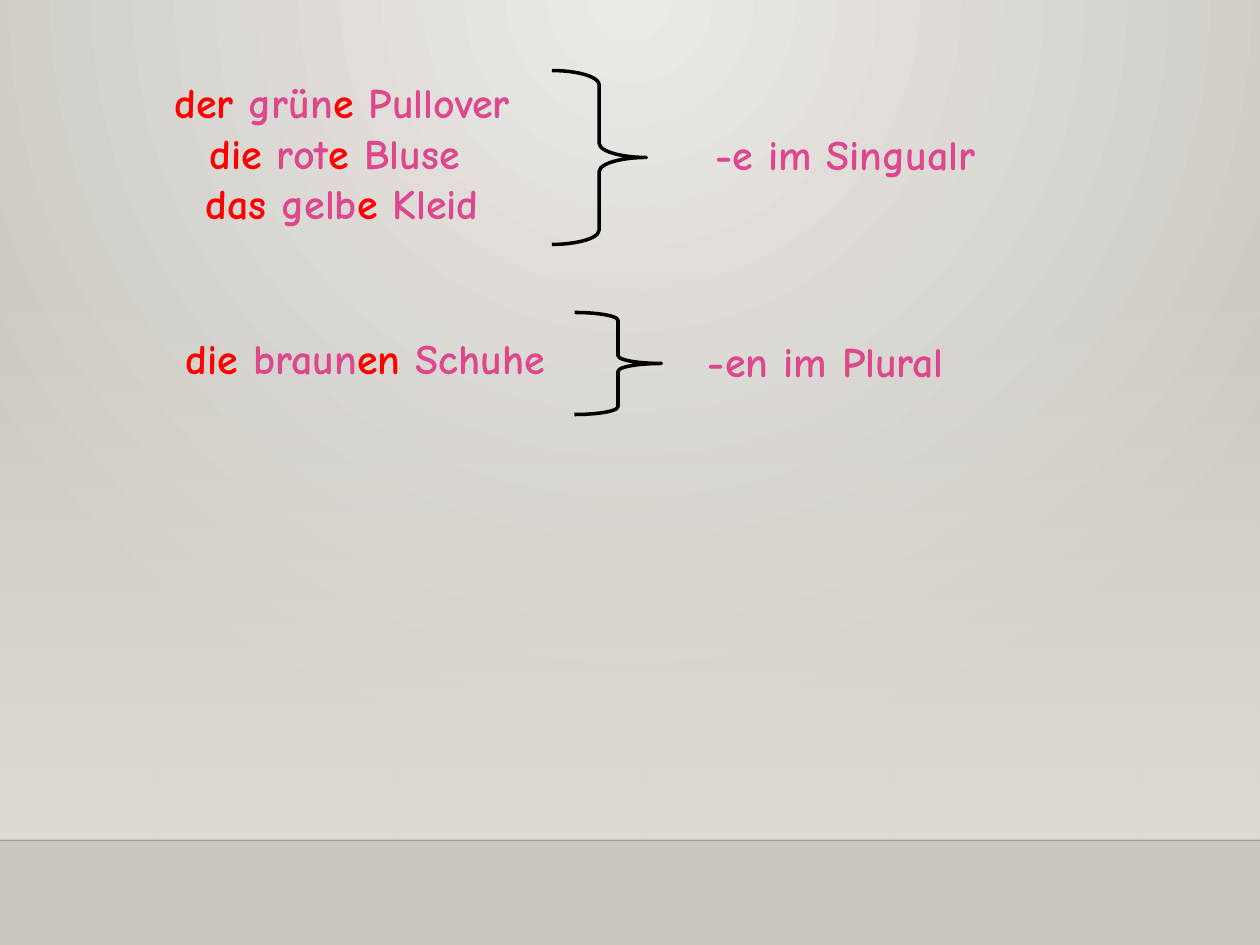
from dataclasses import dataclass

from lxml.etree import SubElement
from pptx import Presentation
from pptx.dml.color import RGBColor
from pptx.enum.shapes import MSO_CONNECTOR, MSO_SHAPE
from pptx.enum.text import MSO_AUTO_SIZE, PP_ALIGN
from pptx.oxml.ns import qn
from pptx.util import Inches, Pt


@dataclass(frozen=True)
class Theme:
    font: str = "Comic Neue"
    size: int = 24
    red: str = "FF0000"
    pink: str = "DE478E"
    ink: str = "000000"
    edge: str = "000001"
    light: str = "ECEAE7"
    dark: str = "CAC7C1"
    glow: str = "DFDBD5"


THEME = Theme()


def rgb(code):
    return RGBColor.from_string(code)


def set_alpha(root, value):
    """Give the first colour under root an opacity in percent."""
    color = next(root.iter(qn("a:srgbClr")))
    SubElement(color, qn("a:alpha"), val=str(value * 1000))


def set_stops(fill, *codes):
    fill.gradient()
    for stop, code, place in zip(fill.gradient_stops, codes, (0, 1)):
        stop.color.rgb = rgb(code)
        stop.position = place


def paint_back(slide):
    # Round glow that starts at the top centre
    set_stops(slide.background.fill, THEME.light, THEME.dark)
    grad = next(slide.element.iter(qn("a:gradFill")))
    grad.remove(grad.find(qn("a:lin")))
    ring = SubElement(grad, qn("a:path"), {"path": "circle"})
    SubElement(ring, qn("a:fillToRect"),
               l="43000", t="0", r="43000", b="100000")

    # Band that fades in down to the floor line
    band = slide.shapes.add_shape(
        MSO_SHAPE.RECTANGLE, 0, Inches(2.2), Inches(10), Inches(4.46))
    band.shadow.inherit = False
    band.line.fill.background()
    set_stops(band.fill, THEME.glow, THEME.glow)
    band.fill.gradient_angle = 270
    set_alpha(band.element, 0)

    # Floor line
    floor = slide.shapes.add_connector(
        MSO_CONNECTOR.STRAIGHT, 0, Inches(6.67), Inches(10), Inches(6.67))
    floor.line.color.rgb = rgb(THEME.edge)
    floor.line.width = Pt(1)
    set_alpha(floor.element, 20)
    SubElement(floor.element.spPr, qn("a:effectLst"))


def add_text(slide, box, lines, wrap=True):
    """Each line is a list of parts that are red and pink in turn."""
    frame = slide.shapes.add_textbox(*map(Inches, box)).text_frame
    frame.word_wrap = wrap
    frame.auto_size = MSO_AUTO_SIZE.SHAPE_TO_FIT_TEXT
    for i, parts in enumerate(lines):
        para = frame.add_paragraph() if i else frame.paragraphs[0]
        para.alignment = PP_ALIGN.CENTER
        para.font.name = THEME.font
        para.font.size = Pt(THEME.size)
        para.font.bold = True
        for j, part in enumerate(parts):
            if part:
                run = para.add_run()
                run.text = part
                run.font.color.rgb = rgb(THEME.pink if j % 2 else THEME.red)


def add_brace(slide, box, curve):
    brace = slide.shapes.add_shape(MSO_SHAPE.RIGHT_BRACE, *map(Inches, box))
    brace.shadow.inherit = False
    brace.adjustments[0] = curve
    brace.adjustments[1] = 0.5
    brace.fill.background()
    brace.line.color.rgb = rgb(THEME.ink)
    brace.line.width = Pt(2)


def main():
    deck = Presentation()
    deck.slide_width, deck.slide_height = Inches(10), Inches(7.5)
    slide = deck.slides.add_slide(deck.slide_layouts[6])
    paint_back(slide)

    # Singular
    add_text(slide, (1.14, 0.56, 3.15, 1.31), [
        ["der", " grün", "e", " Pullover"],
        ["die", " rot", "e", " Bluse "],
        ["das", " gelb", "e", " Kleid"],
    ], wrap=False)
    add_brace(slide, (4.38, 0.56, 0.75, 1.38), 0.15)
    add_text(slide, (5.4, 0.97, 2.62, 0.5), [["", "-e im Singualr"]])

    # Plural
    add_text(slide, (1.12, 2.59, 3.56, 0.5),
             [["die ", "braun", "en ", "Schuhe"]])
    add_brace(slide, (4.56, 2.48, 0.69, 0.81), 0.09)
    add_text(slide, (5.4, 2.61, 2.31, 0.5), [["", "-en im Plural"]],
             wrap=False)

    deck.save("out.pptx")


if __name__ == "__main__":
    main()
